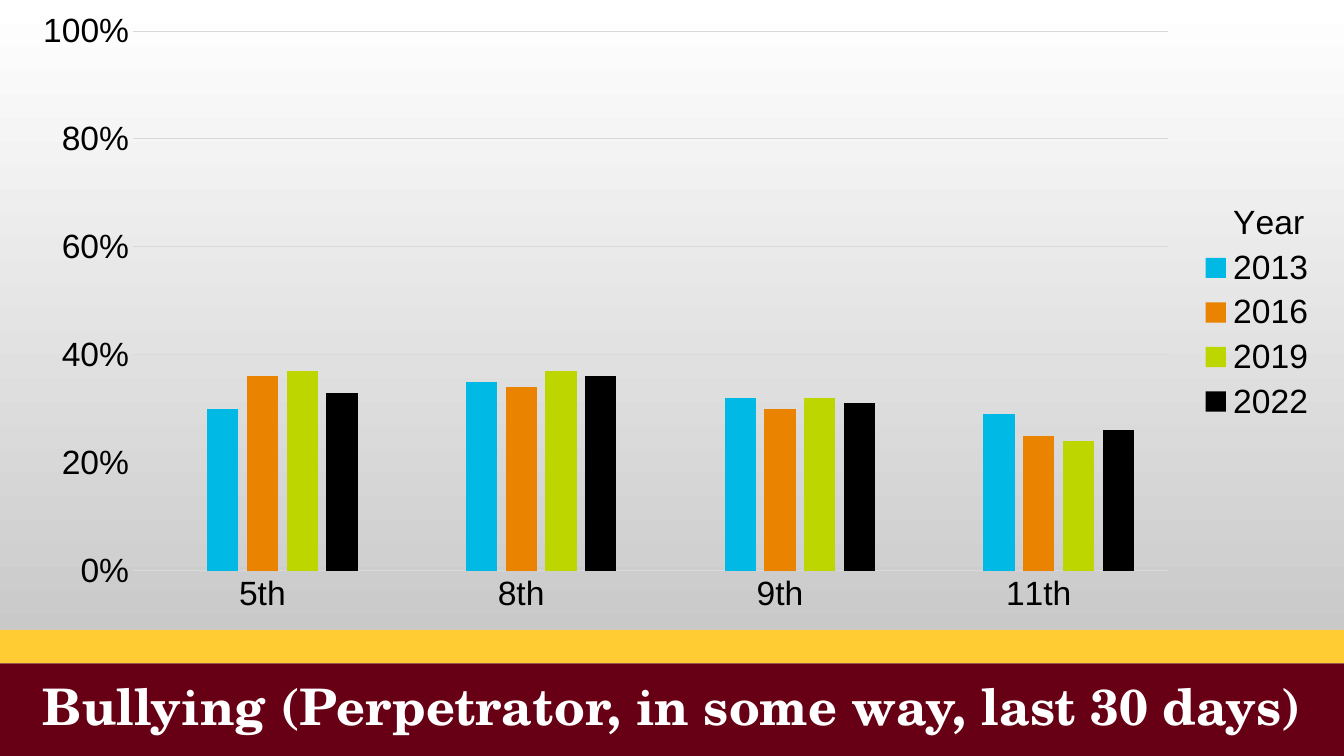
"""Builds the bullying survey slide with its chart and title band."""
from lxml.etree import SubElement
from pptx import Presentation
from pptx.chart.data import CategoryChartData
from pptx.dml.color import RGBColor
from pptx.enum.chart import XL_CHART_TYPE, XL_LEGEND_POSITION, XL_TICK_MARK
from pptx.enum.shapes import MSO_SHAPE
from pptx.enum.text import MSO_ANCHOR, PP_ALIGN
from pptx.oxml.ns import qn
from pptx.util import Pt

WHITE = RGBColor(0xFF, 0xFF, 0xFF)
BLACK = RGBColor(0x00, 0x00, 0x00)
SILVER = RGBColor(0xBF, 0xBF, 0xBF)
GRID = RGBColor(0xD9, 0xD9, 0xD9)
MAROON = RGBColor(0x67, 0x00, 0x15)
GOLD = RGBColor(0xFF, 0xCC, 0x33)
BLUE = RGBColor(0x00, 0xB9, 0xE4)
ORANGE = RGBColor(0xE9, 0x83, 0x00)
LIME = RGBColor(0xBE, 0xD6, 0x00)

WIDTH, HEIGHT = 960, 540
GOLD_TOP, MAROON_TOP = 450, 473.76
CHART_LEFT, CHART_WIDTH, CHART_HEIGHT = 12.24, 936, 446.4
PLOT_LEFT, PLOT_TOP, PLOT_WIDTH, PLOT_HEIGHT = 82.8, 22.2, 739.4, 385.6
GRADES = ["5th", "8th", "9th", "11th"]
YEARS = [
    ("2013", [0.30, 0.35, 0.32, 0.29], BLUE),
    ("2016", [0.36, 0.34, 0.30, 0.25], ORANGE),
    ("2019", [0.37, 0.37, 0.32, 0.24], LIME),
    ("2022", [0.33, 0.36, 0.31, 0.26], BLACK),
    ("Year", [None, None], None),
]


class SlideBuilder:
    """Holds the style and the current slide."""

    title_font = "TeX Gyre Schola"
    chart_font = "Arial"
    title_size = Pt(36)
    chart_size = Pt(24)

    def __init__(self, slide):
        self.slide = slide

    def background(self, top_color, bottom_color):
        fill = self.slide.background.fill
        fill.gradient()
        fill.gradient_angle = 270
        for stop, color, position in zip(fill.gradient_stops, (top_color, bottom_color), (0, 1)):
            stop.color.rgb = color
            stop.position = position

    def band(self, top, height, color):
        shape = self.slide.shapes.add_shape(MSO_SHAPE.RECTANGLE, 0, Pt(top), Pt(WIDTH), Pt(height))
        shape.shadow.inherit = False
        shape.fill.solid()
        shape.fill.fore_color.rgb = color
        shape.line.fill.background()

    def title(self, text, top, height):
        box = self.slide.shapes.add_textbox(0, Pt(top), Pt(WIDTH), Pt(height))
        frame = box.text_frame
        frame.word_wrap = True
        frame.vertical_anchor = MSO_ANCHOR.MIDDLE
        paragraph = frame.paragraphs[0]
        paragraph.alignment = PP_ALIGN.CENTER
        paragraph.line_spacing = 0.9
        run = paragraph.add_run()
        run.text = text
        self.style_font(run.font, self.title_font, self.title_size, WHITE)
        run.font.bold = True

    def style_font(self, font, name, size, color):
        font.name = name
        font.size = size
        font.color.rgb = color

    def style_line(self, line):
        line.color.rgb = GRID
        line.width = Pt(0.75)

    def place_plot(self, chart):
        plot_area = chart.plots[0]._element.getparent()
        for old_layout in plot_area.findall(qn("c:layout")):
            plot_area.remove(old_layout)
        layout = SubElement(plot_area, qn("c:layout"))
        plot_area.insert(0, layout)
        manual = SubElement(layout, qn("c:manualLayout"))
        settings = {
            "layoutTarget": "inner",
            "xMode": "edge",
            "yMode": "edge",
            "x": PLOT_LEFT / CHART_WIDTH,
            "y": PLOT_TOP / CHART_HEIGHT,
            "w": PLOT_WIDTH / CHART_WIDTH,
            "h": PLOT_HEIGHT / CHART_HEIGHT,
        }
        for tag, value in settings.items():
            SubElement(manual, qn(f"c:{tag}")).set("val", str(value))

    def draw_last_series_first(self, plot):
        first, *_, last = plot._element.findall(qn("c:ser"))
        first.addprevious(last)

    def column_chart(self, left, top, width, height):
        data = CategoryChartData(number_format="0%")
        data.categories = GRADES
        for name, values, _ in YEARS:
            data.add_series(name, values)
        chart = self.slide.shapes.add_chart(
            XL_CHART_TYPE.COLUMN_CLUSTERED, Pt(left), Pt(top), Pt(width), Pt(height), data
        ).chart
        chart.has_title = False
        self.style_font(chart.font, self.chart_font, self.chart_size, BLACK)

        plot = chart.plots[0]
        plot.gap_width = 219
        plot.overlap = -27
        plot.vary_by_categories = False
        for series, (_, _, color) in zip(plot.series, YEARS):
            if color is None:
                series.format.fill.background()
            else:
                series.format.fill.solid()
                series.format.fill.fore_color.rgb = color
        self.draw_last_series_first(plot)

        for axis in (chart.category_axis, chart.value_axis):
            axis.major_tick_mark = XL_TICK_MARK.NONE
            axis.minor_tick_mark = XL_TICK_MARK.NONE
            self.style_font(axis.tick_labels.font, self.chart_font, self.chart_size, BLACK)
        self.style_line(chart.category_axis.format.line)

        value_axis = chart.value_axis
        value_axis.minimum_scale = 0
        value_axis.maximum_scale = 1
        value_axis.major_unit = 0.2
        value_axis.tick_labels.number_format = "0%"
        value_axis.tick_labels.number_format_is_linked = False
        value_axis.format.line.fill.background()
        self.style_line(value_axis.major_gridlines.format.line)

        chart.has_legend = True
        chart.legend.position = XL_LEGEND_POSITION.RIGHT
        chart.legend.include_in_layout = False
        self.style_font(chart.legend.font, self.chart_font, self.chart_size, BLACK)
        self.place_plot(chart)


def main():
    presentation = Presentation()
    presentation.slide_width = Pt(WIDTH)
    presentation.slide_height = Pt(HEIGHT)
    builder = SlideBuilder(presentation.slides.add_slide(presentation.slide_layouts[6]))
    builder.background(WHITE, SILVER)
    builder.band(MAROON_TOP, HEIGHT - MAROON_TOP, MAROON)
    builder.band(GOLD_TOP, MAROON_TOP - GOLD_TOP, GOLD)
    builder.title("Bullying (Perpetrator, in some way, last 30 days)", MAROON_TOP, HEIGHT - MAROON_TOP)
    builder.column_chart(CHART_LEFT, 0, CHART_WIDTH, CHART_HEIGHT)
    presentation.save("out.pptx")


if __name__ == "__main__":
    main()
